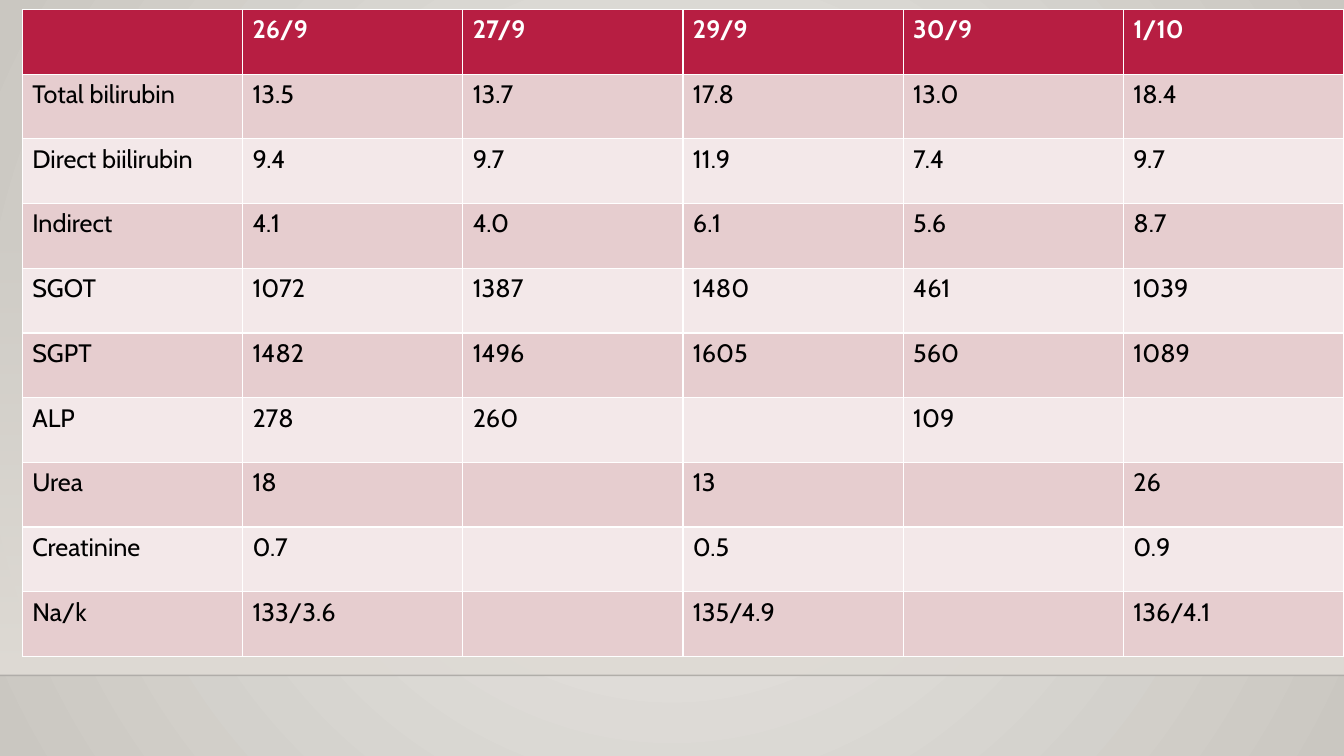
"""Build a slide with a table of daily liver and kidney test results."""
from dataclasses import dataclass

from lxml.etree import SubElement
from pptx import Presentation
from pptx.dml.color import RGBColor
from pptx.enum.shapes import MSO_CONNECTOR, MSO_SHAPE
from pptx.oxml.ns import qn
from pptx.util import Cm, Pt

FONT_NAME = "Cabin"
CRIMSON = RGBColor(0xB7, 0x1E, 0x42)
ROSE = RGBColor(0xE6, 0xCD, 0xCF)
PALE_ROSE = RGBColor(0xF3, 0xE8, 0xE9)
WHITE = RGBColor(0xFF, 0xFF, 0xFF)
BLACK = RGBColor(0x00, 0x00, 0x00)
NEAR_BLACK = RGBColor(0x00, 0x00, 0x01)
SAND = RGBColor(0xDF, 0xDB, 0xD5)
LIGHT_STONE = RGBColor(0xEC, 0xEA, 0xE7)
DARK_STONE = RGBColor(0xCA, 0xC7, 0xC1)

SLIDE_WIDTH = 33.87
SLIDE_HEIGHT = 19.05
FLOOR_TOP = 17.02
PANEL_TOP = 5.61
TABLE_LEFT = 0.56
TABLE_TOP = 0.24
COLUMN_WIDTH = 5.55
ROW_HEIGHT = 1.63

RESULTS = [
    ["", "26/9", "27/9", "29/9", "30/9", "1/10"],
    ["Total bilirubin", "13.5", "13.7", "17.8", "13.0", "18.4"],
    ["Direct biilirubin", "9.4", "9.7", "11.9", "7.4", "9.7"],
    ["Indirect", "4.1", "4.0", "6.1", "5.6", "8.7"],
    ["SGOT", "1072", "1387", "1480", "461", "1039"],
    ["SGPT", "1482", "1496", "1605", "560", "1089"],
    ["ALP", "278", "260", "", "109", ""],
    ["Urea", "18", "", "13", "", "26"],
    ["Creatinine", "0.7", "", "0.5", "", "0.9"],
    ["Na/k", "133/3.6", "", "135/4.9", "", "136/4.1"],
]


@dataclass(frozen=True)
class Rule:
    """A horizontal line, with lengths in centimetres."""

    left: float
    right: float
    top: float
    color: RGBColor
    weight: float
    opacity: int = 100


RULES = [
    Rule(0, SLIDE_WIDTH, FLOOR_TOP, NEAR_BLACK, 1, 20),
    Rule(4.04, 30.73, 5.13, CRIMSON, 2.5),
]


def set_opacity(element, percent: int) -> None:
    """Make the first colour inside an element partly transparent."""
    color = next(element.iter(qn("a:srgbClr")))
    SubElement(color, qn("a:alpha"), val=str(percent * 1000))


def set_gradient(fill, start: RGBColor, end: RGBColor) -> None:
    """Give a fill a gradient between two colours."""
    fill.gradient()
    for stop, color, position in zip(fill.gradient_stops, (start, end), (0, 1)):
        stop.color.rgb = color
        stop.position = position


def paint_background(slide) -> None:
    """Fill the slide with a gradient spreading from its centre."""
    background = slide.background
    set_gradient(background.fill, LIGHT_STONE, DARK_STONE)
    gradient = next(slide.element.iter(qn("a:gradFill")))
    gradient.remove(gradient.find(qn("a:lin")))
    circle = SubElement(gradient, qn("a:path"), path="circle")
    SubElement(circle, qn("a:fillToRect"), l="50000", t="50000", r="50000", b="50000")


def add_panel(slide) -> None:
    """Add the wall panel that fades in downwards."""
    panel = slide.shapes.add_shape(
        MSO_SHAPE.RECTANGLE, 0, Cm(PANEL_TOP), Cm(SLIDE_WIDTH), Cm(FLOOR_TOP - PANEL_TOP)
    )
    panel.shadow.inherit = False
    panel.line.fill.background()
    set_gradient(panel.fill, SAND, SAND)
    panel.fill.gradient_angle = 270
    set_opacity(panel.element.spPr, 0)


def add_rule(slide, rule: Rule) -> None:
    """Draw one horizontal line."""
    connector = slide.shapes.add_connector(
        MSO_CONNECTOR.STRAIGHT, Cm(rule.left), Cm(rule.top), Cm(rule.right), Cm(rule.top)
    )
    connector.line.color.rgb = rule.color
    connector.line.width = Pt(rule.weight)
    if rule.opacity < 100:
        set_opacity(connector.element.spPr, rule.opacity)
    SubElement(connector.element.spPr, qn("a:effectLst"))


def fill_cell(cell, text: str, row_index: int) -> None:
    """Colour a cell by its row and write its text."""
    is_header = row_index == 0
    cell.fill.solid()
    cell.fill.fore_color.rgb = CRIMSON if is_header else ROSE if row_index % 2 else PALE_ROSE
    if text:
        run = cell.text_frame.paragraphs[0].add_run()
        run.text = text
        run.font.name = FONT_NAME
        run.font.size = Pt(18)
        run.font.bold = is_header
        run.font.color.rgb = WHITE if is_header else BLACK


def add_results_table(slide) -> None:
    """Add the table of test results."""
    row_count, column_count = len(RESULTS), len(RESULTS[0])
    table = slide.shapes.add_table(
        row_count, column_count, Cm(TABLE_LEFT), Cm(TABLE_TOP),
        Cm(COLUMN_WIDTH * column_count), Cm(ROW_HEIGHT * row_count),
    ).table
    for column in table.columns:
        column.width = Cm(COLUMN_WIDTH)
    for row_index, (row, texts) in enumerate(zip(table.rows, RESULTS)):
        row.height = Cm(ROW_HEIGHT)
        for cell, text in zip(row.cells, texts):
            fill_cell(cell, text, row_index)


def main() -> None:
    """Build and save the presentation."""
    presentation = Presentation()
    presentation.slide_width = Cm(SLIDE_WIDTH)
    presentation.slide_height = Cm(SLIDE_HEIGHT)
    slide = presentation.slides.add_slide(presentation.slide_layouts[6])
    paint_background(slide)
    add_panel(slide)
    for rule in RULES:
        add_rule(slide, rule)
    add_results_table(slide)
    presentation.save("out.pptx")


if __name__ == "__main__":
    main()
